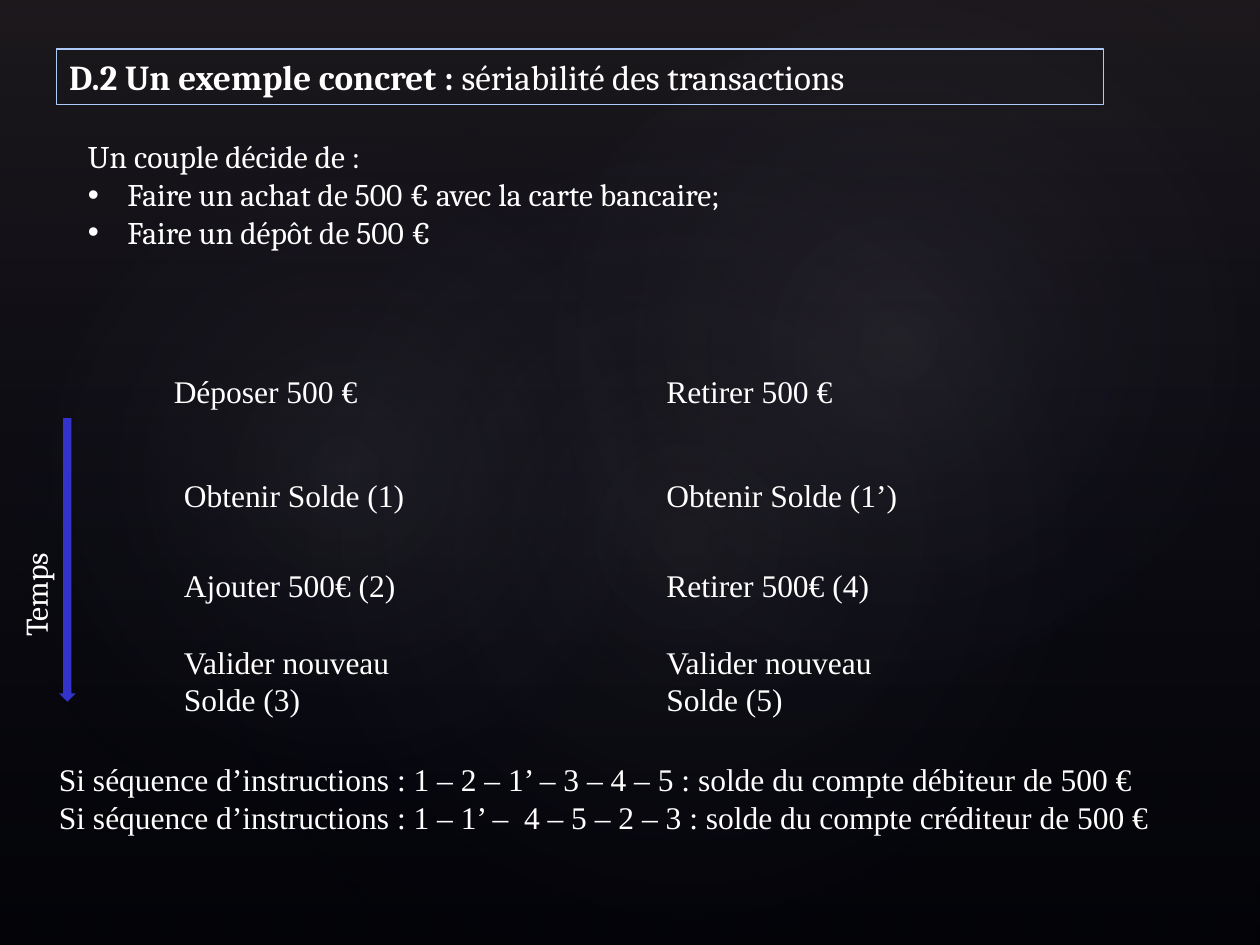
from typing import NamedTuple

from lxml.etree import SubElement
from pptx import Presentation
from pptx.dml.color import RGBColor
from pptx.enum.shapes import MSO_SHAPE
from pptx.enum.text import MSO_ANCHOR, MSO_AUTO_SIZE, PP_ALIGN
from pptx.oxml.ns import qn
from pptx.util import Pt

SERIF = "Times New Roman"
HEADING = "Cambria"
WHITE = "FFFFFF"
SLIDE_WIDTH, SLIDE_HEIGHT = 720, 540


class Box(NamedTuple):
    """Position and size in points."""
    left: float
    top: float
    width: float
    height: float

    def lengths(self):
        return [Pt(value) for value in self]


class Stop(NamedTuple):
    """Gradient stop; position and opacity in percent."""
    position: int
    color: str
    opacity: int


class Glow(NamedTuple):
    box: Box
    rotation: float
    opacity: int
    color: str = "C4BCC6"


class Transaction(NamedTuple):
    title: str
    title_left: float
    steps_left: float
    step_widths: tuple
    steps: tuple


GLOWS = [
    Glow(Box(108, 82, 570, 449), 328.7, 7),
    Glow(Box(-21.6, 92, 436, 353), 294.3, 8),
    Glow(Box(257.8, 9.4, 510.5, 374.4), 328.7, 8),
]
TRANSACTIONS = [
    Transaction("Déposer 500 €", 92.2, 98, (140.4, 140.4, 140.4),
                ("Obtenir Solde (1)", "Ajouter 500€ (2)", "Valider nouveau Solde (3)")),
    Transaction("Retirer 500 €", 373.7, 373.7, (160, 140.4, 140.4),
                ("Obtenir Solde (1’)", "Retirer 500€ (4)", "Valider nouveau Solde (5)")),
]
TITLE_TOP = 208.8
STEP_TOPS = (268.6, 319.7, 363.6)
STEP_HEIGHTS = (28.8, 28.8, 51)


def rgb(color: str) -> RGBColor:
    return RGBColor.from_string(color)


def add_shape(slide, kind, box: Box, fill: str | None = None, line: str | None = None):
    shape = slide.shapes.add_shape(kind, *box.lengths())
    shape.shadow.inherit = False
    if fill:
        shape.fill.solid()
        shape.fill.fore_color.rgb = rgb(fill)
    else:
        shape.fill.background()
    if line:
        shape.line.color.rgb = rgb(line)
        shape.line.width = Pt(0.75)
    else:
        shape.line.fill.background()
    return shape


def set_gradient(shape, stops: list[Stop], circular: bool = False) -> None:
    """Replace an empty fill by a translucent vertical or circular gradient."""
    properties = shape._element.spPr
    gradient = SubElement(properties, qn("a:gradFill"), rotWithShape="1")
    stop_list = SubElement(gradient, qn("a:gsLst"))
    for stop in stops:
        entry = SubElement(stop_list, qn("a:gs"), pos=str(stop.position * 1000))
        color = SubElement(entry, qn("a:srgbClr"), val=stop.color)
        SubElement(color, qn("a:alpha"), val=str(stop.opacity * 1000))
    if circular:
        circle = SubElement(gradient, qn("a:path"), path="circle")
        SubElement(circle, qn("a:fillToRect"), l="50000", t="50000", r="50000", b="50000")
    else:
        SubElement(gradient, qn("a:lin"), ang="5400000", scaled="0")
    properties.replace(properties.find(qn("a:noFill")), gradient)


def add_bullet(paragraph, indent: float = 22.5) -> None:
    properties = paragraph._p.get_or_add_pPr()
    properties.set("marL", str(Pt(indent)))
    properties.set("indent", str(-Pt(indent)))
    SubElement(properties, qn("a:buFont"), typeface="Arial")
    SubElement(properties, qn("a:buChar"), char="•")


def write_text(shape, lines: list[str], font: str = SERIF, size: float = 18,
               color: str = WHITE, bold_start: str = "", bulleted_from: int | None = None) -> None:
    """Write one paragraph per line; bold_start precedes the first line."""
    frame = shape.text_frame
    frame.word_wrap = True
    frame.auto_size = MSO_AUTO_SIZE.SHAPE_TO_FIT_TEXT
    frame.vertical_anchor = MSO_ANCHOR.TOP
    for index, line in enumerate(lines):
        paragraph = frame.add_paragraph() if index else frame.paragraphs[0]
        paragraph.alignment = PP_ALIGN.LEFT
        if bulleted_from is not None and index >= bulleted_from:
            add_bullet(paragraph)
        parts = [(line, False)]
        if bold_start and index == 0:
            parts.insert(0, (bold_start, True))
        for text, bold in parts:
            run = paragraph.add_run()
            run.text = text
            run.font.name = font
            run.font.size = Pt(size)
            run.font.bold = bold
            run.font.color.rgb = rgb(color)


def add_text(slide, box: Box, lines: list[str], **text_format):
    shape = slide.shapes.add_textbox(*box.lengths())
    write_text(shape, lines, **text_format)
    return shape


def draw_background(slide) -> None:
    slide.background.fill.solid()
    slide.background.fill.fore_color.rgb = rgb("000000")
    shade = add_shape(slide, MSO_SHAPE.RECTANGLE, Box(0, 0, SLIDE_WIDTH, SLIDE_HEIGHT))
    set_gradient(shade, [Stop(0, "504652", 36), Stop(100, "242852", 10)])
    for glow in GLOWS:
        ellipse = add_shape(slide, MSO_SHAPE.OVAL, glow.box)
        ellipse.rotation = glow.rotation
        set_gradient(ellipse, [Stop(0, glow.color, glow.opacity), Stop(58, "242852", 0)],
                     circular=True)


def draw_transaction(slide, transaction: Transaction) -> None:
    add_text(slide, Box(transaction.title_left, TITLE_TOP, 145, 28.8), [transaction.title])
    rows = zip(transaction.steps, transaction.step_widths, STEP_TOPS, STEP_HEIGHTS)
    for step, width, top, height in rows:
        add_text(slide, Box(transaction.steps_left, top, width, height), [step])


def draw_time_axis(slide) -> None:
    add_shape(slide, MSO_SHAPE.DOWN_ARROW, Box(33.8, 239, 9.4, 162), fill="3333CC")
    label = add_text(slide, Box(-22.3, 314, 85, 28.8), ["Temps"], font=HEADING)
    label.rotation = 270


def main() -> None:
    presentation = Presentation()
    presentation.slide_width = Pt(SLIDE_WIDTH)
    presentation.slide_height = Pt(SLIDE_HEIGHT)
    slide = presentation.slides.add_slide(presentation.slide_layouts[6])

    draw_background(slide)
    add_text(slide, Box(43.2, 75, 616.3, 72.7),
             ["Un couple décide de :",
              "Faire un achat de 500 € avec la carte bancaire;",
              "Faire un dépôt de 500 €"],
             font=HEADING, bulleted_from=1)
    draw_time_axis(slide)
    for transaction in TRANSACTIONS:
        draw_transaction(slide, transaction)
    add_text(slide, Box(26.6, 430.6, 652.3, 51),
             ["Si séquence d’instructions : 1 – 2 – 1’ – 3 – 4 – 5 : solde du compte débiteur de 500 €",
              "Si séquence d’instructions : 1 – 1’ –  4 – 5 – 2 – 3 : solde du compte créditeur de 500 €"])
    heading = add_shape(slide, MSO_SHAPE.RECTANGLE, Box(32.4, 28.1, 598.3, 31.7), line="ACCBF9")
    write_text(heading, ["sériabilité des transactions"], font=HEADING, size=20,
               bold_start="D.2 Un exemple concret : ")

    presentation.save("out.pptx")


if __name__ == "__main__":
    main()
